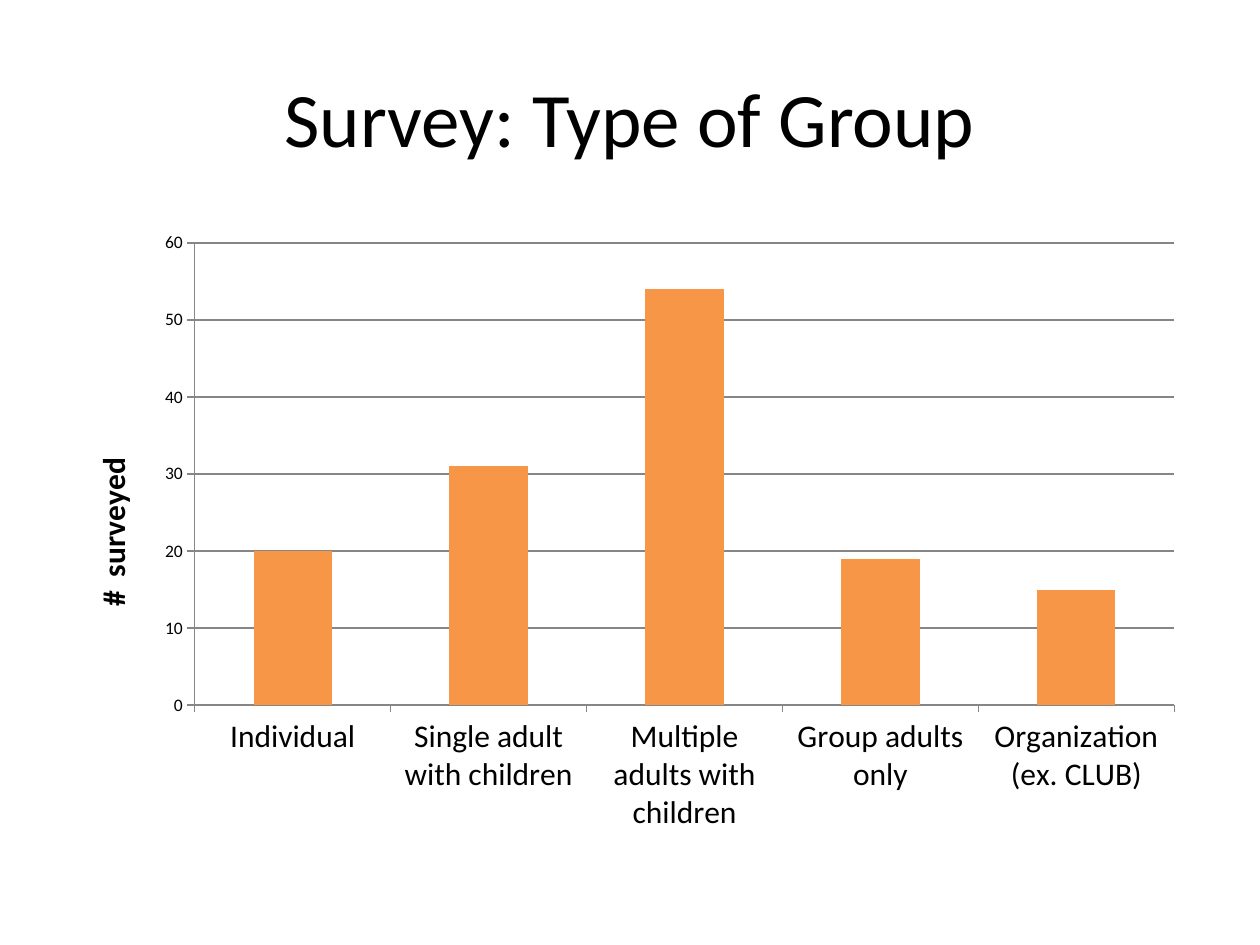
from pptx import Presentation
from pptx.chart.data import CategoryChartData
from pptx.dml.color import RGBColor
from pptx.enum.chart import XL_CHART_TYPE, XL_TICK_MARK
from pptx.enum.text import MSO_ANCHOR, PP_ALIGN
from pptx.util import Cm, Pt

COLUMNS = XL_CHART_TYPE.COLUMN_CLUSTERED
TICK_OUTSIDE = XL_TICK_MARK.OUTSIDE
MIDDLE = MSO_ANCHOR.MIDDLE
CENTER = PP_ALIGN.CENTER

BLACK = RGBColor(0x00, 0x00, 0x00)
GRAY = RGBColor(0x86, 0x86, 0x86)
ORANGE = RGBColor(0xF7, 0x96, 0x46)

GROUP_COUNTS = {
    "Individual": 20,
    "Single adult with children": 31,
    "Multiple adults with children": 54,
    "Group adults only": 19,
    "Organization (ex. CLUB)": 15,
}


def style_font(font, size, bold=False, color=BLACK, name="Calibri"):
    font.name = name
    font.size = Pt(size)
    font.bold = bold
    font.color.rgb = color


def write_text(frame, text, size, bold=False, align=CENTER):
    paragraph = frame.paragraphs[0]
    paragraph.alignment = align
    run = paragraph.add_run()
    run.text = text
    style_font(run.font, size, bold)


class SurveySlide:
    """Holds the slide and the style shared by its elements."""

    left = Cm(1.27)
    width = Cm(22.86)
    label_size = 18

    def __init__(self, presentation):
        title_only = presentation.slide_layouts[5]
        self.slide = presentation.slides.add_slide(title_only)

    def title(self, text, top, height):
        heading = self.slide.shapes.title
        heading.left, heading.top = self.left, top
        heading.width, heading.height = self.width, height
        heading.text_frame.vertical_anchor = MIDDLE
        write_text(heading.text_frame, text, 44)

    def column_chart(self, counts, axis_label, top, height):
        data = CategoryChartData()
        data.categories = list(counts)
        data.add_series("Series 1", list(counts.values()))
        chart = self.slide.shapes.add_chart(
            COLUMNS, self.left, top, self.width, height, data).chart
        chart.has_title = False
        chart.has_legend = False
        style_font(chart.font, 10)

        # Columns
        plot = chart.plots[0]
        plot.gap_width = 150
        plot.vary_by_categories = False
        fill = plot.series[0].format.fill
        fill.solid()
        fill.fore_color.rgb = ORANGE

        # Axes
        groups, surveyed = chart.category_axis, chart.value_axis
        for axis in (groups, surveyed):
            axis.major_tick_mark = TICK_OUTSIDE
            self.line(axis.format.line)
        style_font(groups.tick_labels.font, self.label_size)
        style_font(surveyed.tick_labels.font, 10)
        surveyed.minimum_scale, surveyed.maximum_scale = 0, 60
        surveyed.major_unit = 10
        surveyed.has_major_gridlines = True
        self.line(surveyed.major_gridlines.format.line)
        write_text(surveyed.axis_title.text_frame, axis_label,
                   self.label_size, bold=True)

    def line(self, line):
        line.color.rgb = GRAY
        line.width = Pt(0.75)


def main():
    presentation = Presentation()
    presentation.slide_width, presentation.slide_height = Cm(25.4), Cm(19.05)
    survey = SurveySlide(presentation)
    survey.title("Survey: Type of Group", top=Cm(0.76), height=Cm(3.18))
    survey.column_chart(GROUP_COUNTS, "#  surveyed",
                        top=Cm(4.45), height=Cm(12.57))
    presentation.save("out.pptx")


if __name__ == "__main__":
    main()
